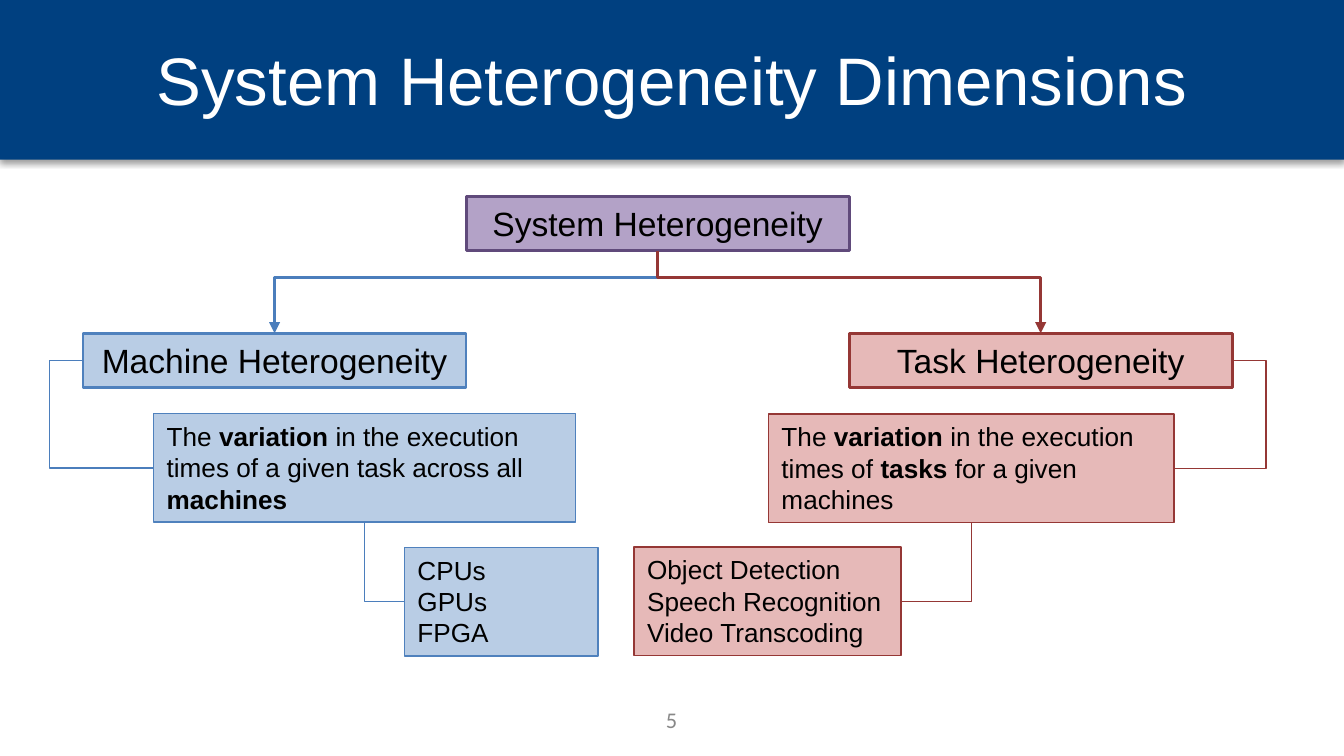
from lxml import etree
from pptx import Presentation
from pptx import util as u
from pptx.dml.color import RGBColor
from pptx.enum import shapes, text
from pptx.oxml.ns import qn

COLORS = {
    "navy": "004080", "white": "FFFFFF", "black": "000000", "gray": "888888",
    "blue": "B9CDE5", "blue_edge": "4F81BD", "blue_link": "4B7EBC",
    "red": "E6B9B8", "red_edge": "953735", "red_link": "953735",
    "purple": "B3A2C7", "purple_edge": "604A7B",
}
C = {name: RGBColor.from_string(value) for name, value in COLORS.items()}


def write(sp, paragraphs, align, anchor, size, color="black", font="Arial"):
    """Fill a shape with paragraphs; parts between asterisks become bold."""
    tf = sp.text_frame
    for name, value in {"word_wrap": True, "vertical_anchor": anchor}.items():
        setattr(tf, name, value)
    for i, line in enumerate(paragraphs):
        p = tf.paragraphs[0] if i == 0 else tf.add_paragraph()
        p.alignment = align
        for j, part in enumerate(line.split("*")):
            if not part:
                continue
            r = p.add_run()
            r.text = part
            r.font.color.rgb = C[color]
            fmt = {"name": font, "size": u.Pt(size), "bold": j % 2 == 1}
            for name, value in fmt.items():
                setattr(r.font, name, value)


def elbow(x1, y1, x2, y2, color, width, adj=None, down=False, arrow=False):
    """Draw a bent connector; with down it leaves its start vertically."""
    dx, dy = x2 - x1, y2 - y1
    if down:  # the frame is stored unrotated, then turned about its centre
        turn = -1 if dx > 0 else 1
        cx, cy = (x1 + x2) / 2, (y1 + y2) / 2
        hx, hy = turn * dy / 2, -turn * dx / 2
        x1, y1, x2, y2 = cx - hx, cy - hy, cx + hx, cy + hy
    ends = [u.Cm(v) for v in (x1, y1, x2, y2)]
    sp = s.shapes.add_connector(shapes.MSO_CONNECTOR.ELBOW, *ends)
    sp.line.color.rgb = C[color]
    sp.line.width = u.Pt(width)
    pr = sp._element.spPr
    if down:
        pr.find(qn("a:xfrm")).set("rot", str(turn * 5400000 % 21600000))
    geom = pr.find(qn("a:prstGeom"))
    if adj is None:
        geom.set("prst", "bentConnector2")
    else:
        guides = geom.find(qn("a:avLst"))
        if guides is None:
            guides = etree.SubElement(geom, qn("a:avLst"))
        etree.SubElement(guides, qn("a:gd"), name="adj1",
                         fmla=f"val {round(adj * 100000)}")
    if arrow:
        etree.SubElement(pr.find(qn("a:ln")), qn("a:tailEnd"), type="triangle")
    etree.SubElement(pr, qn("a:effectLst"))


prs = Presentation()
prs.slide_width, prs.slide_height = u.Cm(25.4), u.Cm(14.29)
s = prs.slides.add_slide(prs.slide_layouts[6])
CENTER, LEFT = text.PP_ALIGN.CENTER, text.PP_ALIGN.LEFT
TOP, MIDDLE = text.MSO_ANCHOR.TOP, text.MSO_ANCHOR.MIDDLE

# Header band with a soft shadow below it
band = s.shapes.add_shape(shapes.MSO_SHAPE.RECTANGLE, 0, 0, prs.slide_width, u.Cm(3.02))
band.fill.solid()
band.fill.fore_color.rgb = C["navy"]
band.line.fill.background()
effects = etree.SubElement(band._element.spPr, qn("a:effectLst"))
shadow = etree.SubElement(effects, qn("a:outerShdw"), blurRad=str(u.Pt(3.1)),
                          dist=str(u.Pt(1.6)), dir="5400000", rotWithShape="0")
shade = etree.SubElement(shadow, qn("a:srgbClr"), val=COLORS["black"])
etree.SubElement(shade, qn("a:alpha"), val="38000")

# Title and page number
for box, line, size, color, font in [
    ((1.27, 0.3, 22.86, 2.39), "System Heterogeneity Dimensions", 36, "white", "Arial"),
    ((9.73, 13.23, 5.92, 0.76), "5", 12, "gray", "Calibri"),
]:
    sp = s.shapes.add_textbox(*[u.Cm(v) for v in box])
    write(sp, [line], CENTER, MIDDLE, size, color, font)

# Boxes of the tree: left, top, width, height
HEAD_W, HEAD_H, BODY_H = 7.24, 1.03, 2.05
machine, system, task = [(1.57 + HEAD_W * col, top, HEAD_W, HEAD_H)
                         for col, top in enumerate((6.3, 3.71, 6.3))]
machine_note = (2.9, 7.82, 7.98, BODY_H)
task_note = (14.52, 7.83, 7.67, BODY_H)
machine_list = (7.64, 10.35, 3.66, BODY_H)
task_list = (11.98, 10.34, 5.05, BODY_H)

for box, color, lines in [
    (machine, "blue", ["Machine Heterogeneity"]),
    (task, "red", ["Task Heterogeneity"]),
    (system, "purple", ["System Heterogeneity"]),
    (machine_note, "blue", ["The *variation* in the execution times of a given "
                            "task across all* machines*"]),
    (task_note, "red", ["The *variation* in the execution times of *tasks* "
                        "for a given machines"]),
    (machine_list, "blue", ["CPUs", "GPUs", "FPGA"]),
    (task_list, "red", ["Object Detection", "Speech Recognition", "Video Transcoding"]),
]:
    head = box[3] == HEAD_H
    sp = s.shapes.add_shape(shapes.MSO_SHAPE.RECTANGLE, *[u.Cm(v) for v in box])
    sp.shadow.inherit = False
    sp.fill.solid()
    sp.fill.fore_color.rgb = C[color]
    sp.line.color.rgb = C[color + "_edge"]
    sp.line.width = u.Pt(1.5 if head else 0.75)
    sp.text_frame.auto_size = text.MSO_AUTO_SIZE.SHAPE_TO_FIT_TEXT
    write(sp, lines, CENTER if head else LEFT, TOP, 18 if head else 14)

# Connectors of both branches; side is 0 for a box's left edge, 1 for its right
LOOP = 0.64
for side, color, head, note, items in [
    (0, "blue_link", machine, machine_note, machine_list),
    (1, "red_link", task, task_note, task_list),
]:
    elbow(system[0] + HEAD_W / 2, system[1] + HEAD_H, head[0] + HEAD_W / 2, head[1],
          color, 1.5, adj=0.32, down=True, arrow=True)
    x1, x2 = [box[0] + side * box[2] for box in (head, note)]
    elbow(x1, head[1] + HEAD_H / 2, x2, note[1] + BODY_H / 2,
          color, 0.75, adj=-LOOP / abs(x2 - x1))
    elbow(note[0] + note[2] / 2, note[1] + BODY_H,
          items[0] + side * items[2], items[1] + BODY_H / 2, color, 0.75, down=True)

prs.save("out.pptx")
